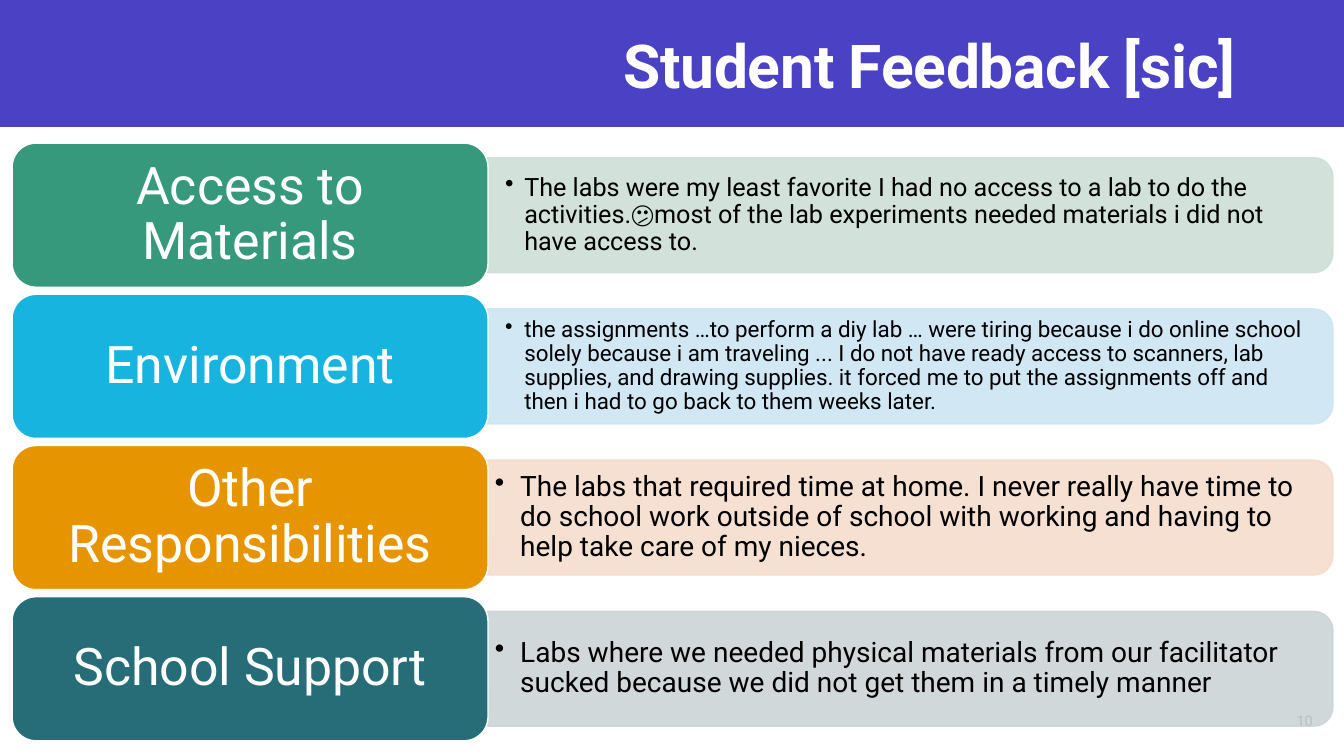
from dataclasses import dataclass

from lxml import etree
from pptx import Presentation
from pptx.dml.color import RGBColor
from pptx.enum.shapes import MSO_SHAPE
from pptx.enum.text import MSO_ANCHOR, PP_ALIGN
from pptx.oxml.ns import qn
from pptx.util import Inches, Pt

RECTANGLE = MSO_SHAPE.RECTANGLE
ROUNDED = MSO_SHAPE.ROUNDED_RECTANGLE
ROUNDED_TOP = MSO_SHAPE.ROUND_2_SAME_RECTANGLE
MIDDLE = MSO_ANCHOR.MIDDLE
LEFT, CENTER, RIGHT = PP_ALIGN.LEFT, PP_ALIGN.CENTER, PP_ALIGN.RIGHT

FONT = "Roboto"
WHITE, BLACK = "FFFFFF", "000000"

# Row geometry in inches
FIRST_TOP, PITCH = 1.42, 1.5
LABEL_LEFT, LABEL_WIDTH, LABEL_HEIGHT = 0.12, 4.72, 1.43
PANEL_LEFT, PANEL_WIDTH, PANEL_HEIGHT = 4.83, 8.39, 1.14
QUOTE_WIDTH, QUOTE_HEIGHT = 8.33, 1.03


@dataclass
class QuoteStyle:
    size: float
    inset: float
    indent: float


@dataclass
class Feedback:
    label: str
    quote: str
    label_color: str
    panel_color: str
    style: QuoteStyle


LARGE = QuoteStyle(20, 0.08, 0.25)
ROWS = [
    Feedback("Access to Materials",
             "The labs were my least favorite I had no access to a lab to do the "
             "activities.😕most of the lab experiments needed materials i did not "
             "have access to.",
             "37997B", "CEDED7", QuoteStyle(18, 0.18, 0.19)),
    Feedback("Environment",
             "the assignments …to perform a diy lab … were tiring because i do online "
             "school solely because i am traveling ... I do not have ready access to "
             "scanners, lab supplies, and drawing supplies. it forced me to put the "
             "assignments off and then i had to go back to them weeks later.",
             "17B4DF", "CCE5F3", QuoteStyle(16, 0.18, 0.19)),
    Feedback("Other Responsibilities",
             "The labs that required time at home. I never really have time to do "
             "school work outside of school with working and having to help take care "
             "of my nieces.",
             "E69500", "F5DDCC", LARGE),
    Feedback("School Support",
             "Labs where we needed physical materials from our facilitator sucked "
             "because we did not get them in a timely manner",
             "276D77", "CDD4D6", LARGE),
]


def rgb(value: str) -> RGBColor:
    return RGBColor.from_string(value)


def add_block(page, kind, left: float, top: float, width: float, height: float,
              fill: str, line: str | None = None):
    block = page.shapes.add_shape(kind, Inches(left), Inches(top),
                                  Inches(width), Inches(height))
    block.shadow.inherit = False
    block.fill.solid()
    block.fill.fore_color.rgb = rgb(fill)
    if line:
        block.line.color.rgb = rgb(line)
        block.line.width = Pt(1)
    else:
        block.line.fill.background()
    return block


def add_box(page, left: float, top: float, width: float, height: float):
    return page.shapes.add_textbox(Inches(left), Inches(top),
                                   Inches(width), Inches(height))


def write(box, text: str, size: float, color: str, align,
          inset: float = 0.1, spacing: float = 1.0):
    """Write one middle-anchored paragraph; return it with its span."""
    frame = box.text_frame
    frame.word_wrap = True
    frame.vertical_anchor = MIDDLE
    frame.margin_left = frame.margin_right = Inches(inset)
    frame.margin_top = frame.margin_bottom = Inches(inset / 2)
    para = frame.paragraphs[0]
    para.alignment = align
    para.line_spacing = spacing
    span = para.add_run()
    span.text = text
    span.font.name = FONT
    span.font.size = Pt(size)
    span.font.color.rgb = rgb(color)
    return para, span


def add_bullet(para, indent: float) -> None:
    props = para._p.get_or_add_pPr()
    props.set("marL", str(Inches(indent)))
    props.set("indent", str(-Inches(indent)))
    etree.SubElement(props, qn("a:buChar")).set("char", "•")


def set_opacity(block, percent: int) -> None:
    for color in block._element.spPr.iter(qn("a:srgbClr")):
        etree.SubElement(color, qn("a:alpha")).set("val", str(percent * 1000))


def add_row(page, row: Feedback, top: float) -> None:
    middle = top + LABEL_HEIGHT / 2

    # Panel: an upright shape turned a quarter so its round corners face right
    center = PANEL_LEFT + PANEL_WIDTH / 2
    panel = add_block(page, ROUNDED_TOP, center - PANEL_HEIGHT / 2,
                      middle - PANEL_WIDTH / 2, PANEL_HEIGHT, PANEL_WIDTH,
                      row.panel_color, row.panel_color)
    panel.rotation = 90
    set_opacity(panel, 90)

    # Quote
    box = add_box(page, PANEL_LEFT, middle - QUOTE_HEIGHT / 2,
                  QUOTE_WIDTH, QUOTE_HEIGHT)
    para, _ = write(box, row.quote, row.style.size, BLACK, LEFT,
                    row.style.inset, 0.9)
    add_bullet(para, row.style.indent)

    # Label
    label = add_block(page, ROUNDED, LABEL_LEFT, top, LABEL_WIDTH, LABEL_HEIGHT,
                      row.label_color, WHITE)
    write(label, row.label, 37, WHITE, CENTER, 0.15, 0.9)


def main() -> None:
    deck = Presentation()
    deck.slide_width, deck.slide_height = Inches(13.33), Inches(7.5)
    page = deck.slides.add_slide(deck.slide_layouts[6])

    # Title band
    add_block(page, RECTANGLE, 0, 0, 13.33, 1.26, "4A41C5")
    title = add_box(page, 1.37, 0.21, 10.98, 0.85)
    _, span = write(title, "Student Feedback [sic]", 43.2, WHITE, RIGHT)
    span.font.bold = True
    span._r.get_or_add_rPr().set("spc", "-20")

    # Page number, showing faintly through the last panel
    write(add_box(page, 12.43, 6.95, 0.69, 0.4), "10", 10.5, BLACK, RIGHT)

    # Feedback rows
    for index, row in enumerate(ROWS):
        add_row(page, row, FIRST_TOP + index * PITCH)

    deck.save("out.pptx")


if __name__ == "__main__":
    main()
